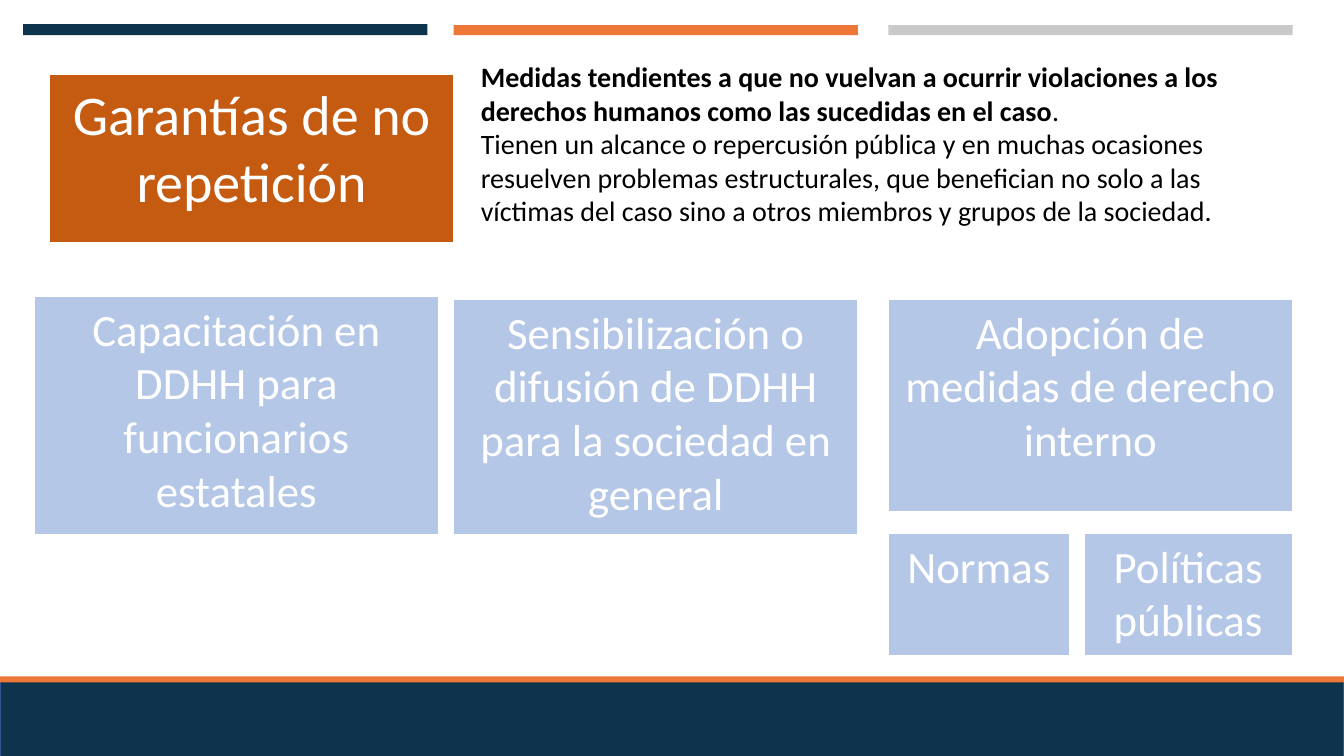
"""Build a slide on guarantees of non-repetition."""
from dataclasses import dataclass

import pptx
import pptx.dml.color
import pptx.enum.shapes
import pptx.enum.text
import pptx.util

Inches = pptx.util.Inches
Pt = pptx.util.Pt
Color = pptx.dml.color.RGBColor.from_string


@dataclass(frozen=True)
class Theme:
    font: str = "Calibri"
    navy: str = "0D334D"
    orange: str = "ED7736"
    gray: str = "C9C9C9"
    rust: str = "C55A11"
    sky: str = "B4C7E7"
    edge: str = "325491"
    white: str = "FFFFFF"
    black: str = "000000"
    title: int = 40
    card: int = 32
    body: int = 20


THEME = Theme()
WIDTH = 4.01
LEFT, MID, RIGHT = 0.34, 4.5, 8.81


def add_run(para, text, size, color, bold=False):
    run = para.add_run()
    run.text = text
    run.font.name = THEME.font
    run.font.size = Pt(size)
    run.font.bold = bold
    run.font.color.rgb = Color(color)


def add_bar(slide, box, fill, line=None):
    kind = pptx.enum.shapes.MSO_SHAPE.RECTANGLE
    bar = slide.shapes.add_shape(kind, *map(Inches, box))
    bar.shadow.inherit = False
    bar.fill.solid()
    bar.fill.fore_color.rgb = Color(fill)
    if line:
        bar.line.color.rgb = Color(line)
        bar.line.width = Pt(1)
    else:
        bar.line.fill.background()
    return bar


def add_card(slide, box, text, fill=THEME.sky, size=THEME.card):
    frame = add_bar(slide, box, fill, THEME.white).text_frame
    frame.word_wrap = True
    frame.vertical_anchor = pptx.enum.text.MSO_ANCHOR.TOP
    para = frame.paragraphs[0]
    para.alignment = pptx.enum.text.PP_ALIGN.CENTER
    add_run(para, text, size, THEME.white)


def add_note(slide, box, paras):
    frame = slide.shapes.add_textbox(*map(Inches, box)).text_frame
    frame.word_wrap = True
    frame.auto_size = pptx.enum.text.MSO_AUTO_SIZE.SHAPE_TO_FIT_TEXT
    for index, runs in enumerate(paras):
        para = frame.add_paragraph() if index else frame.paragraphs[0]
        for text, bold in runs:
            add_run(para, text, THEME.body, THEME.black, bold)


def main():
    deck = pptx.Presentation()
    deck.slide_width, deck.slide_height = Inches(13.33), Inches(7.5)
    slide = deck.slides.add_slide(deck.slide_layouts[6])

    add_bar(slide, (0.23, 0.24, WIDTH, 0.11), THEME.navy)
    for left, fill in ((MID, THEME.orange), (RIGHT, THEME.gray)):
        add_bar(slide, (left, 0.25, WIDTH, 0.1), fill)
    add_bar(slide, (0, 6.76, 13.33, 0.76), THEME.navy, THEME.edge)
    add_bar(slide, (0, 6.71, 13.33, 0.06), THEME.orange)

    add_card(slide, (0.49, 0.74, WIDTH, 1.67), "Garantías de no repetición",
             THEME.rust, THEME.title)
    cards = (
        ((LEFT, 2.94, WIDTH, 2.37),
         "Capacitación en DDHH para funcionarios estatales"),
        ((MID, 2.97, WIDTH, 2.34),
         "Sensibilización o difusión de DDHH para la sociedad en general"),
        ((RIGHT, 2.97, WIDTH, 2.11),
         "Adopción de medidas de derecho interno"),
        ((RIGHT, 5.29, 1.8, 1.22), "Normas"),
        ((10.75, 5.29, 2.07, 1.22), "Políticas públicas"),
    )
    for box, text in cards:
        add_card(slide, box, text)

    add_note(slide, (4.67, 0.54, 8.15, 1.78), (
        (("Medidas tendientes a que no vuelvan a ocurrir violaciones a los "
          "derechos humanos como las sucedidas en el caso", True),
         (".", False)),
        (("Tienen un alcance o repercusión pública y en muchas ocasiones "
          "resuelven problemas estructurales, que benefician no solo a las "
          "víctimas del caso sino a otros miembros y grupos de la sociedad.",
          False),),
    ))
    deck.save("out.pptx")


if __name__ == "__main__":
    main()
